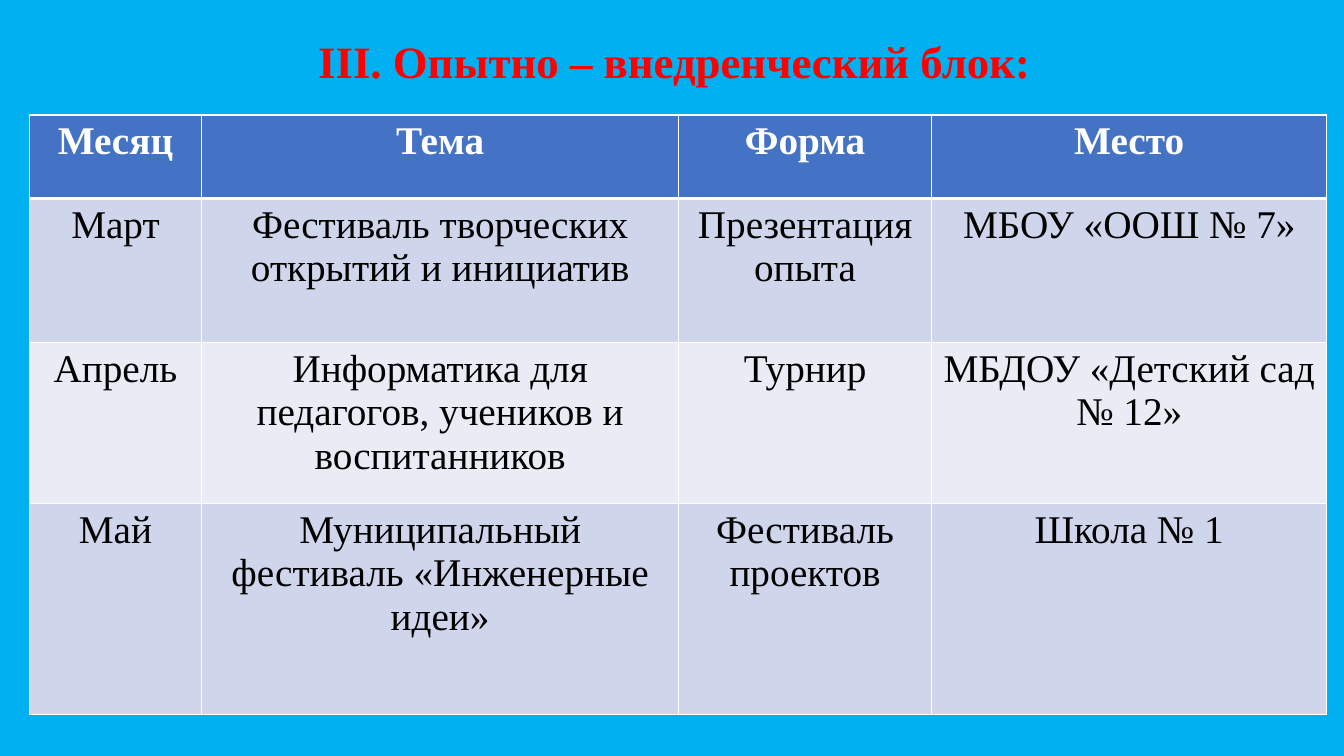
import lxml.etree
import pptx
import pptx.dml.color
import pptx.enum.text
import pptx.oxml.ns
import pptx.util

SLIDE_WIDTH, SLIDE_HEIGHT = 13.33, 7.5
FONT = "Times New Roman"
BACKGROUND, TITLE_RED = "00B0F0", "FF0000"
HEADER_FILL, BAND_FILLS = "4472C4", ("E9EBF5", "CFD5EA")
WHITE, BLACK = "FFFFFF", "000000"
COLUMN_WIDTHS = (1.71, 4.73, 2.51, 3.92)
ROW_HEIGHTS = (0.83, 1.43, 1.6, 2.1)
SCHEDULE = (
    ("Месяц", "Тема", "Форма", "Место"),
    ("Март", "Фестиваль творческих открытий и инициатив",
     "Презентация опыта", "МБОУ «ООШ № 7»"),
    ("Апрель", "Информатика для педагогов, учеников и воспитанников",
     "Турнир", "МБДОУ «Детский сад № 12»"),
    ("Май", "Муниципальный фестиваль «Инженерные идеи»",
     "Фестиваль проектов", "Школа № 1"),
)


def paint(color_fill, color):
    """Make a fill solid in the given hex colour."""
    color_fill.solid()
    color_fill.fore_color.rgb = pptx.dml.color.RGBColor.from_string(color)


def add_centred_run(paragraph, text, size, color, bold):
    """Add one formatted run to a centred paragraph."""
    paragraph.alignment = pptx.enum.text.PP_ALIGN.CENTER
    run = paragraph.add_run()
    run.text = text
    run.font.name = FONT
    run.font.size = pptx.util.Pt(size)
    run.font.bold = bold
    paint(run.font.fill, color)


def set_borders(cell, widths):
    """Draw white cell borders with point widths keyed by side."""
    properties = cell._tc.get_or_add_tcPr()
    for side, width in widths.items():
        line = lxml.etree.SubElement(
            properties, pptx.oxml.ns.qn(f"a:ln{side}"), w=str(pptx.util.Pt(width)))
        solid = lxml.etree.SubElement(line, pptx.oxml.ns.qn("a:solidFill"))
        lxml.etree.SubElement(solid, pptx.oxml.ns.qn("a:srgbClr"), val=WHITE)


def add_title(slide, left, top, width, height):
    """Place the slide heading in its box."""
    title = slide.shapes.title
    title.left, title.top, title.width, title.height = map(
        pptx.util.Inches, (left, top, width, height))
    frame = title.text_frame
    frame.word_wrap = True
    frame.auto_size = pptx.enum.text.MSO_AUTO_SIZE.NONE
    frame.vertical_anchor = pptx.enum.text.MSO_ANCHOR.TOP
    paragraph = frame.paragraphs[0]
    paragraph.line_spacing = 0.9
    paragraph.space_before = pptx.util.Pt(10)
    add_centred_run(paragraph, "III. Опытно – внедренческий блок:", 32, TITLE_RED, True)


def add_schedule(slide, left, top, width, height):
    """Fill the box with the schedule table, scaling its columns and rows."""
    table = slide.shapes.add_table(
        len(ROW_HEIGHTS), len(COLUMN_WIDTHS),
        *map(pptx.util.Inches, (left, top, width, height))).table
    for column, share in zip(table.columns, COLUMN_WIDTHS):
        column.width = pptx.util.Inches(width * share / sum(COLUMN_WIDTHS))
    for row, share in zip(table.rows, ROW_HEIGHTS):
        row.height = pptx.util.Inches(height * share / sum(ROW_HEIGHTS))
    for row_index, texts in enumerate(SCHEDULE):
        header = row_index == 0
        fill = HEADER_FILL if header else BAND_FILLS[row_index % 2]
        borders = {"L": 1, "R": 1, "T": 3 if row_index == 1 else 1, "B": 3 if header else 1}
        for column_index, text in enumerate(texts):
            cell = table.cell(row_index, column_index)
            set_borders(cell, borders)
            paint(cell.fill, fill)
            add_centred_run(cell.text_frame.paragraphs[0], text, 28,
                            WHITE if header else BLACK, header)


def build_schedule_slide(presentation):
    """Add the title-only slide with its heading and schedule."""
    slide = presentation.slides.add_slide(presentation.slide_layouts[5])
    paint(slide.background.fill, BACKGROUND)
    add_title(slide, 0.34, 0.34, 12.7, 0.7)
    add_schedule(slide, 0.29, 1.14, 12.87, 5.95)


def main():
    """Build and save the presentation."""
    presentation = pptx.Presentation()
    presentation.slide_width = pptx.util.Inches(SLIDE_WIDTH)
    presentation.slide_height = pptx.util.Inches(SLIDE_HEIGHT)
    build_schedule_slide(presentation)
    presentation.save("out.pptx")


if __name__ == "__main__":
    main()
